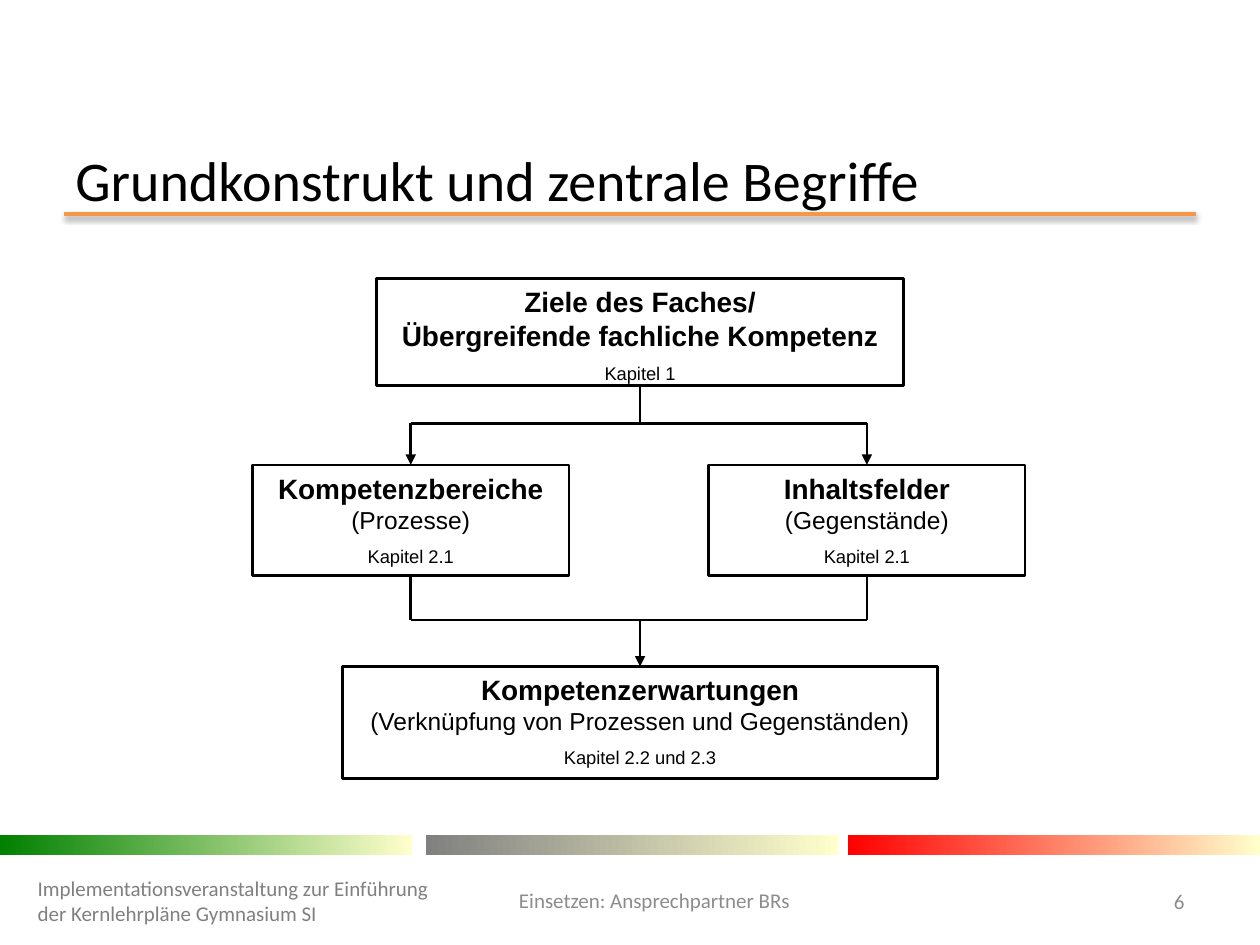
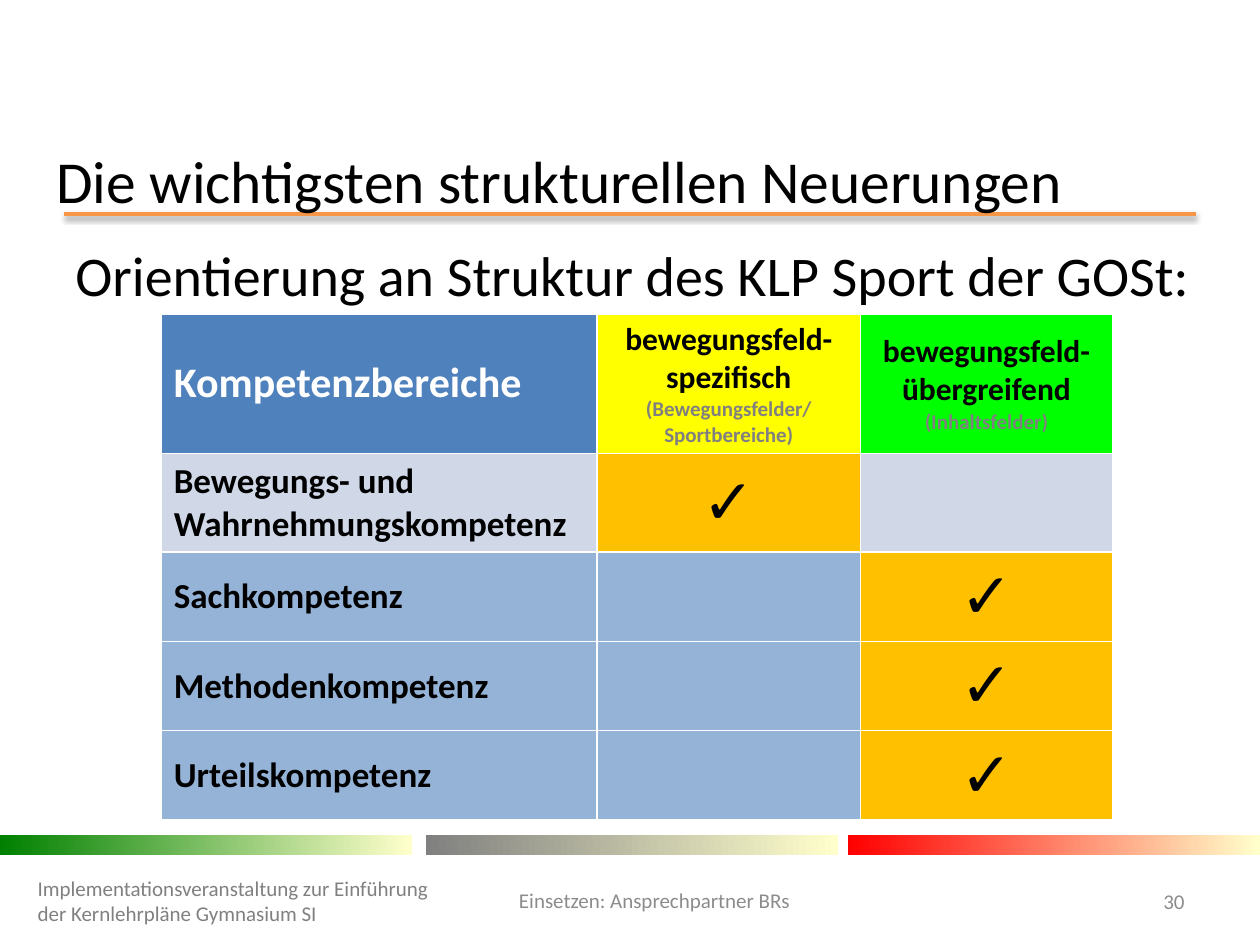
import lxml.etree
import pptx
import pptx.dml.color
import pptx.enum.shapes
import pptx.enum.text
import pptx.oxml
import pptx.oxml.ns
import pptx.util

BLACK, WHITE, GREY, FOOTER_GREY = "000000", "FFFFFF", "808080", "8C8C8C"
ORANGE, CREAM, AMBER = "F79646", "FFFFCC", "FFC000"
HEADER_BLUE, PALE_BLUE, ROW_BLUE = "4F81BD", "D0D8E8", "95B3D7"
YELLOW, GREEN = "FFFF00", "00FF00"
LEFT, CENTER, RIGHT = (pptx.enum.text.PP_ALIGN.LEFT, pptx.enum.text.PP_ALIGN.CENTER,
                       pptx.enum.text.PP_ALIGN.RIGHT)
TOP, MIDDLE = pptx.enum.text.MSO_ANCHOR.TOP, pptx.enum.text.MSO_ANCHOR.MIDDLE
RECTANGLE = pptx.enum.shapes.MSO_SHAPE.RECTANGLE
STRAIGHT = pptx.enum.shapes.MSO_CONNECTOR.STRAIGHT
NS = pptx.oxml.ns.nsdecls("a")
SHADOW = (f'<a:effectLst {NS}><a:outerShdw blurRad="39370" dist="20320" dir="5400000" rotWithShape="0">'
          '<a:srgbClr val="000000"><a:alpha val="38000"/></a:srgbClr></a:outerShdw></a:effectLst>')


def rgb(color):
    return pptx.dml.color.RGBColor.from_string(color)


def write(frame, lines, align=LEFT, anchor=MIDDLE, font="Calibri"):
    """Fill a frame with paragraphs given as (text, size, colour, bold, space before)."""
    frame.word_wrap = True
    frame.vertical_anchor = anchor
    frame.text = "\n".join(line[0] for line in lines)
    for paragraph, (_, size, color, bold, space) in zip(frame.paragraphs, lines):
        paragraph.alignment = align
        if space:
            paragraph.space_before = pptx.util.Pt(space)
        for run in paragraph.runs:
            run.font.name = font
            run.font.size = pptx.util.Pt(size)
            run.font.bold = bold
            run.font.color.rgb = rgb(color)


prs = pptx.Presentation()
prs.slide_width = pptx.util.Inches(10)
prs.slide_height = pptx.util.Inches(7.5)
# The grid has 100 columns and 75 rows of square cells.
CELL = prs.slide_width // 100

# Shared frame: rule, colour bands, title and footers
BAND_WIDTH = 32.7
bands = [(0, "008000"), (33.8, GREY), (67.3, "FF0000")]
titles = [("Grundkonstrukt und zentrale Begriffe", 32, 5, "6"),
          ("Die wichtigsten strukturellen Neuerungen", 34, 3.5, "30")]
slides = []
for title, title_size, title_left, number in titles:
    slide = prs.slides.add_slide(prs.slide_layouts[6])
    slides.append(slide)
    rule = slide.shapes.add_connector(
        STRAIGHT, *(round(v * CELL) for v in (5.1, 17, 94.9, 17)))
    rule.line.color.rgb = rgb(ORANGE)
    rule.line.width = pptx.util.Pt(2)
    rule._element.spPr.append(pptx.oxml.parse_xml(SHADOW))

    for left, color in bands:
        band = slide.shapes.add_shape(
            RECTANGLE, *(round(v * CELL) for v in (left, 66.3, BAND_WIDTH, 1.6)))
        band.shadow.inherit = False
        band.line.fill.background()
        band.fill.gradient()
        band.fill.gradient_angle = 0
        for stop, stop_color in zip(band.fill.gradient_stops, (color, CREAM)):
            stop.color.rgb = rgb(stop_color)

    for text, box, size, color, align in [
        (title, (title_left, 12.3, 90, 3.9), title_size, BLACK, LEFT),
        ("Implementationsveranstaltung zur Einführung der Kernlehrpläne Gymnasium SI",
         (2, 69.5, 33.1, 4), 12, GREY, LEFT),
        ("Einsetzen: Ansprechpartner BRs", (37.4, 67.9, 29.1, 7.1), 12, FOOTER_GREY, CENTER),
        (number, (88.6, 69.5, 6.4, 4), 12, FOOTER_GREY, RIGHT),
    ]:
        label = slide.shapes.add_textbox(*(round(v * CELL) for v in box))
        write(label.text_frame, [(text, size, color, False, 0)], align)

construct, changes = slides

# Slide 1: goals split into two branches that join in the expectations
LEFT_AXIS, MID_AXIS, RIGHT_AXIS = 32.6, 50.8, 68.8
GOALS_TOP, BRANCH_TOP, RESULT_TOP = 22.1, 36.9, 52.9
GOALS_HEIGHT, BRANCH_HEIGHT, RESULT_HEIGHT = 8.5, 8.8, 8.9
SPLIT, JOIN = 33.6, 49.2
for axis, top, width, height, heading, detail, detail_size, chapter in [
    (MID_AXIS, GOALS_TOP, 41.8, GOALS_HEIGHT, "Ziele des Faches/",
     "Übergreifende fachliche Kompetenz", 16, "Kapitel 1"),
    (LEFT_AXIS, BRANCH_TOP, 25.1, BRANCH_HEIGHT, "Kompetenzbereiche",
     "(Prozesse)", 14, "Kapitel 2.1"),
    (RIGHT_AXIS, BRANCH_TOP, 25.1, BRANCH_HEIGHT, "Inhaltsfelder",
     "(Gegenstände)", 14, "Kapitel 2.1"),
    (MID_AXIS, RESULT_TOP, 47.2, RESULT_HEIGHT, "Kompetenzerwartungen",
     "(Verknüpfung von Prozessen und Gegenständen)", 14, "Kapitel 2.2 und 2.3"),
]:
    concept = construct.shapes.add_shape(
        RECTANGLE, *(round(v * CELL) for v in (axis - width / 2, top, width, height)))
    concept.shadow.inherit = False
    concept.fill.solid()
    concept.fill.fore_color.rgb = rgb(WHITE)
    concept.line.color.rgb = rgb(BLACK)
    concept.line.width = pptx.util.Pt(1.5)
    write(concept.text_frame,
          [(heading, 16, BLACK, True, 0),
           (detail, detail_size, BLACK, detail_size == 16, 0),
           (chapter, 10.5, BLACK, False, 6)], CENTER, TOP, "Arial")

flow = [(MID_AXIS, GOALS_TOP + GOALS_HEIGHT, MID_AXIS, SPLIT, False),
        (MID_AXIS, JOIN, MID_AXIS, RESULT_TOP, True)]
for axis in (LEFT_AXIS, RIGHT_AXIS):
    flow += [(MID_AXIS, SPLIT, axis, SPLIT, False),
             (axis, SPLIT, axis, BRANCH_TOP, True),
             (axis, BRANCH_TOP + BRANCH_HEIGHT, axis, JOIN, False),
             (axis, JOIN, MID_AXIS, JOIN, False)]
for *ends, has_arrow in flow:
    link = construct.shapes.add_connector(STRAIGHT, *(round(v * CELL) for v in ends))
    link.line.color.rgb = rgb(BLACK)
    link.line.width = pptx.util.Pt(1.5)
    if has_arrow:
        lxml.etree.SubElement(link.line._get_or_add_ln(),
                              pptx.oxml.ns.qn("a:tailEnd"), type="triangle")
    link._element.spPr.append(pptx.oxml.parse_xml(f"<a:effectLst {NS}/>"))

# Slide 2: lead sentence and competence table
lead = changes.shapes.add_textbox(*(round(v * CELL) for v in (5, 18.6, 92.2, 6.3)))
lead.fill.solid()
lead.fill.fore_color.rgb = rgb(WHITE)
write(lead.text_frame,
      [("Orientierung an Struktur des KLP Sport der GOSt:", 32, BLACK, False, 0)], anchor=TOP)

column_widths = [34.6, 20.9, 20]
row_heights = [11.1, 7.8, 7.1, 7.1, 7.1]
check = [("✓", 36, BLACK, False, 0)]
rows = [[
    ([("Kompetenzbereiche", 24, WHITE, True, 0)], HEADER_BLUE),
    ([("bewegungsfeld-", 18, BLACK, True, 0), ("spezifisch", 18, BLACK, True, 0),
      ("(Bewegungsfelder/ Sportbereiche)", 12, GREY, True, 0)], YELLOW),
    ([("bewegungsfeld-übergreifend", 18, BLACK, True, 0),
      ("(Inhaltsfelder)", 12, GREY, True, 0)], GREEN),
]]
for competence, row_color, checked_column in [
    ("Bewegungs- und Wahrnehmungskompetenz", PALE_BLUE, 1),
    ("Sachkompetenz", ROW_BLUE, 2),
    ("Methodenkompetenz", ROW_BLUE, 2),
    ("Urteilskompetenz", ROW_BLUE, 2),
]:
    row = [([(competence, 20, BLACK, True, 0)], row_color), ([], row_color), ([], row_color)]
    row[checked_column] = (check, AMBER)
    rows.append(row)

table = changes.shapes.add_table(
    len(rows), len(column_widths),
    *(round(v * CELL) for v in (12.8, 24.9, sum(column_widths), sum(row_heights)))).table
for column, width in zip(table.columns, column_widths):
    column.width = round(width * CELL)
for table_row, height, row in zip(table.rows, row_heights, rows):
    table_row.height = round(height * CELL)
    for index, (cell, (lines, color)) in enumerate(zip(table_row.cells, row)):
        cell.fill.solid()
        cell.fill.fore_color.rgb = rgb(color)
        cell.vertical_anchor = MIDDLE
        if lines:
            write(cell.text_frame, lines, CENTER if index else LEFT)

prs.save("out.pptx")
